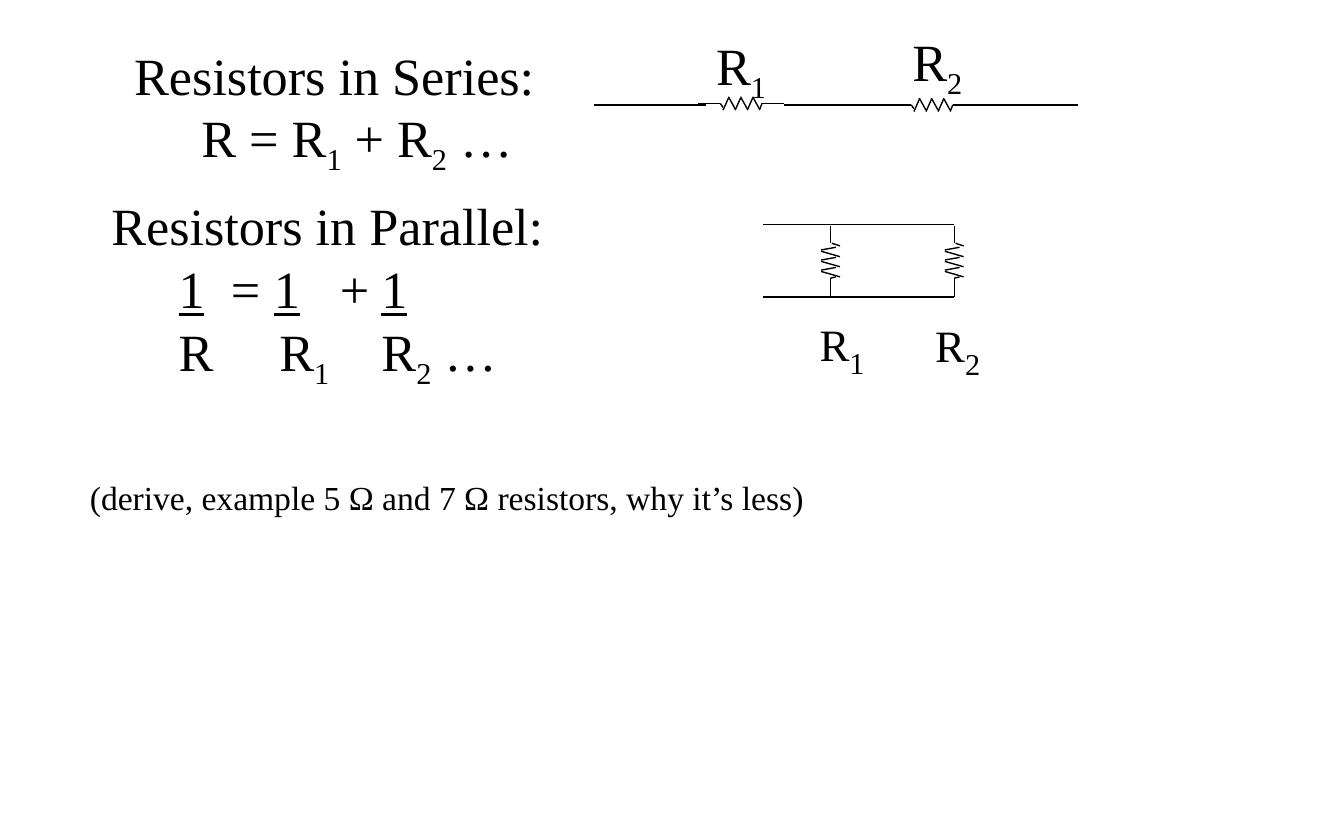
import pptx
import pptx.dml.color
import pptx.enum.shapes
import pptx.enum.text
import pptx.util
from lxml import etree
from pptx.oxml.ns import qn

BLACK = pptx.dml.color.RGBColor(0, 0, 0)
WHITE = pptx.dml.color.RGBColor(255, 255, 255)
FONT = "Times New Roman"
WIDTH, HEIGHT = pptx.util.Inches(10), pptx.util.Inches(6.25)
COLUMNS, ROWS = 1000, 625
PLAIN, SUBSCRIPT, UNDERLINE = {}, {"baseline": "-25000"}, {"u": "sng"}


def across(columns):
    """Return the length of a number of grid columns."""
    return round(WIDTH * columns / COLUMNS)


def down(rows):
    """Return the length of a number of grid rows."""
    return round(HEIGHT * rows / ROWS)


def add_wire(parent, start, end):
    """Draw one thin straight line between two grid points."""
    wire = parent.shapes.add_connector(
        pptx.enum.shapes.MSO_CONNECTOR.STRAIGHT,
        across(start[0]), down(start[1]), across(end[0]), down(end[1]))
    wire.line.color.rgb = BLACK
    wire.line.width = pptx.util.Pt(0.75)
    etree.SubElement(wire._element.spPr, qn("a:effectLst"))


def add_wires(parent, origin, segments):
    """Draw segments given relative to an origin."""
    left, top = origin
    for (x1, y1), (x2, y2) in segments:
        add_wire(parent, (left + x1, top + y1), (left + x2, top + y2))


def add_series_resistor(parent, origin):
    """Draw a horizontal zigzag with a lead on either side."""
    segments = []
    for x in (46, 37, 28):
        segments += [((x, 4), (x - 5, -5)), ((x - 5, -4), (x - 9, 5))]
    segments += [((19, 3), (17, 0)), ((48, 0), (46, 5)),
                 ((17, 0), (0, 0)), ((64, 0), (48, 0))]
    add_wires(parent, origin, segments)


def add_parallel_resistor(parent, origin):
    """Draw a vertical zigzag with a lead above and below."""
    segments = []
    for y in (16, 23.5, 31):
        segments += [((4, y), (-7, y + 2)), ((-7, y + 3), (7, y + 7))]
    segments += [((4, 38), (0, 39)), ((1, 13), (7, 15)),
                 ((0, 39), (0, 53)), ((0, 0), (0, 13))]
    add_wires(parent, origin, segments)


def add_span(para, text, size, style):
    """Add a run of text with a size and character attributes."""
    span = para.add_run()
    span.text = text
    values = {"name": FONT, "size": pptx.util.Pt(size)}
    for name, value in values.items():
        setattr(span.font, name, value)
    span.font.color.rgb = BLACK
    for name, value in style.items():
        span._r.get_or_add_rPr().set(name, value)


def set_tabs(para, stops):
    """Give a paragraph left tab stops at grid columns."""
    tabs = etree.SubElement(para._p.get_or_add_pPr(), qn("a:tabLst"))
    for stop in stops:
        etree.SubElement(tabs, qn("a:tab"), pos=str(across(stop)), algn="l")


def add_text(parent, place, lines, size=28, wrap=False):
    """Add a text box of lines, each with spans, an indent and tab stops."""
    left, top, width, height = place
    box = parent.shapes.add_textbox(
        across(left), down(top), across(width), down(height))
    frame = box.text_frame
    values = {"word_wrap": wrap,
              "auto_size": pptx.enum.text.MSO_AUTO_SIZE.SHAPE_TO_FIT_TEXT}
    for name, value in values.items():
        setattr(frame, name, value)
    for number, (spans, indent, stops) in enumerate(lines):
        para = frame.add_paragraph() if number else frame.paragraphs[0]
        if indent:
            para._p.get_or_add_pPr().set("marL", str(across(indent)))
        if stops:
            set_tabs(para, stops)
        for text, style, *own_size in spans:
            add_span(para, text, own_size[0] if own_size else size, style)


def add_label(parent, place, number, size):
    """Name a resistor with a numbered R."""
    spans = [("R", PLAIN, size), (number, SUBSCRIPT)]
    add_text(parent, place, [(spans, 0, ())])


def add_series(page):
    """Add the series rule and its circuit."""
    group = page.shapes.add_group_shape()
    formula = [("R = R", PLAIN), ("1", SUBSCRIPT), (" + R", PLAIN),
               ("2", SUBSCRIPT), (" …", PLAIN)]
    add_text(group, (90, 27, 321, 104),
             [([("Resistors in Series:", PLAIN)], 0, ()), (formula, 50, ())])
    for origin in ((519, 77), (661, 78)):
        add_series_resistor(group, origin)
    for left in (583, 442, 719):
        add_wire(group, (left, 78), (left + 83, 78))
    add_label(group, (523, 20, 60, 57), "1", 28)
    add_label(group, (669, 17, 60, 57), "2", 28)


def add_parallel(page):
    """Add the parallel rule and its circuit."""
    group = page.shapes.add_group_shape()
    tops = [("\t", PLAIN), ("1", UNDERLINE), ("\t=\t", PLAIN),
            ("1", UNDERLINE), ("\t+\t", PLAIN), ("1", UNDERLINE)]
    bottoms = [("\tR\tR", PLAIN), ("1", SUBSCRIPT), ("\tR", PLAIN),
               ("2", SUBSCRIPT), (" …", PLAIN)]
    add_text(group, (73, 139, 368, 151),
             [([("Resistors in Parallel:", PLAIN)], 0, ()),
              (tops, 0, (50, 89, 121, 170, 201)),
              (bottoms, 0, (50, 125, 201))], wrap=True)
    for left in (618, 710):
        add_parallel_resistor(group, (left, 168))
    for top in (167, 221):
        add_wire(group, (568, top), (710, top))
    add_label(group, (600, 225, 56, 50), "1", 24)
    add_label(group, (686, 226, 56, 50), "2", 24)


def main():
    """Build the slide on resistors and save it."""
    deck = pptx.Presentation()
    deck.slide_width, deck.slide_height = WIDTH, HEIGHT
    page = deck.slides.add_slide(deck.slide_layouts[6])
    page.background.fill.solid()
    page.background.fill.fore_color.rgb = WHITE
    add_series(page)
    add_parallel(page)
    note = "(derive, example 5 Ω and 7 Ω resistors, why it’s less)"
    add_text(page, (57, 350, 558, 40), [([(note, PLAIN)], 0, ())], size=18)
    deck.save("out.pptx")


if __name__ == "__main__":
    main()
